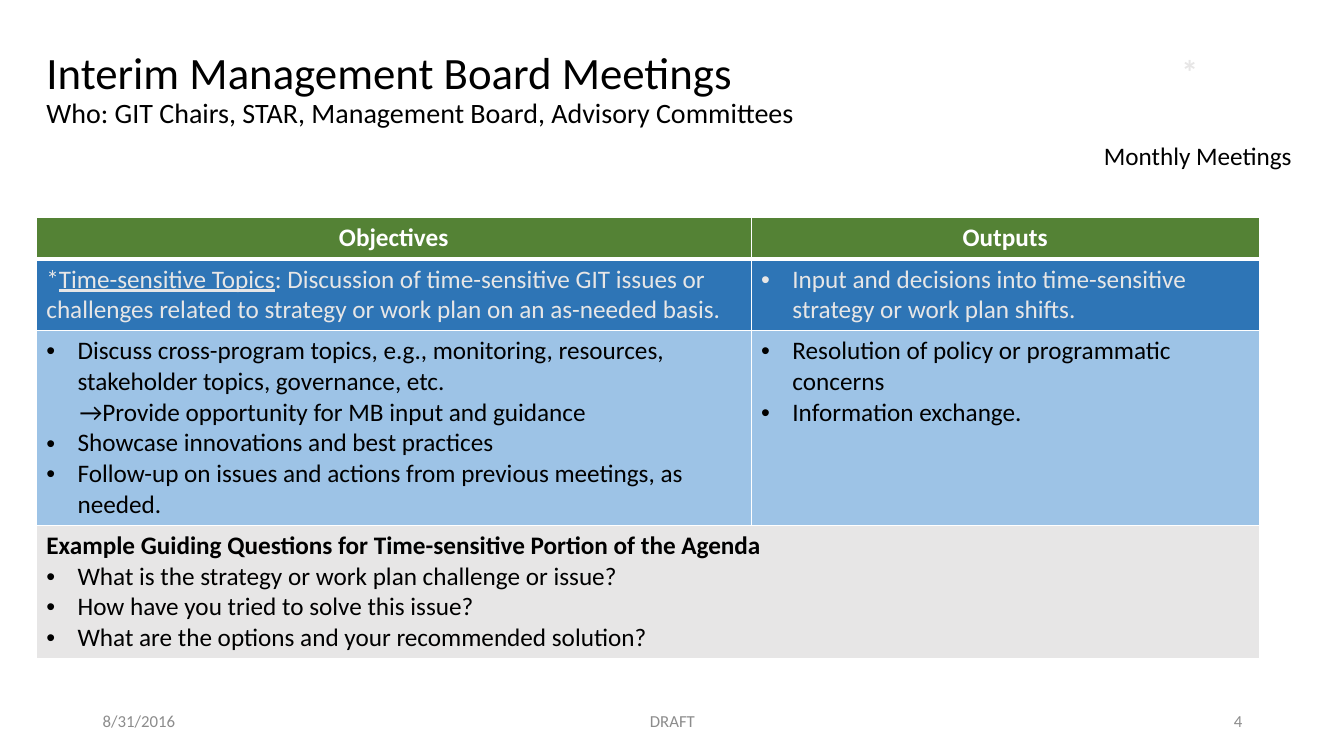
from lxml import etree
from pptx import Presentation
from pptx import util as u
from pptx.dml.color import RGBColor
from pptx.enum import text
from pptx.oxml.ns import qn

BLACK = RGBColor(0, 0, 0)
WHITE = RGBColor(255, 255, 255)
LIGHT = RGBColor(0xE7, 0xE6, 0xE6)
GREY = RGBColor(0x8C, 0x8C, 0x8C)
GREEN = RGBColor(0x54, 0x82, 0x35)
BLUE = RGBColor(0x2E, 0x75, 0xB6)
PALE_BLUE = RGBColor(0x9D, 0xC3, 0xE6)
FONT = "Calibri"
LEFT, CENTER, RIGHT = text.PP_ALIGN.LEFT, text.PP_ALIGN.CENTER, text.PP_ALIGN.RIGHT
TOP, MIDDLE = text.MSO_ANCHOR.TOP, text.MSO_ANCHOR.MIDDLE

# Content
TITLE = [("Interim Management Board Meetings", 32),
         ("Who: GIT Chairs, STAR, Management Board, Advisory Committees", 20)]

# Each paragraph is (kind, text pieces); the second piece, if any, is underlined
ROWS = [
    # height, fill, text colour, cells
    (0.41, GREEN, WHITE, [[("head", ["Objectives"])], [("head", ["Outputs"])]]),
    (0.7, BLUE, LIGHT, [
        [("plain", ["*", "Time-sensitive Topics",
                    ": Discussion of time-sensitive GIT issues or challenges "
                    "related to strategy or work plan on an as-needed basis."])],
        [("bullet", ["Input and decisions into time-sensitive strategy or work plan shifts."])]]),
    (1.93, PALE_BLUE, BLACK, [
        [("bullet", ["Discuss cross-program topics, e.g., monitoring, resources, "
                     "stakeholder topics, governance, etc."]),
         ("sub", ["→Provide opportunity for MB input and guidance"]),
         ("bullet", ["Showcase innovations and best practices"]),
         ("bullet", ["Follow-up on issues and actions from previous meetings, as needed."])],
        [("bullet", ["Resolution of policy or programmatic concerns"]),
         ("bullet", ["Information exchange."])]]),
    (1.32, LIGHT, BLACK, [
        [("strong", ["Example Guiding Questions for Time-sensitive Portion of the Agenda"]),
         ("bullet", ["What is the strategy or work plan challenge or issue?"]),
         ("bullet", ["How have you tried to solve this issue?"]),
         ("bullet", ["What are the options and your recommended solution?"])]]),
]
COLUMNS = [7.09, 5.04]
TABLE_LEFT, TABLE_TOP = 0.36, 2.16

LABELS = [
    # text, left, top, width, height, size, colour, bold, alignment, anchor
    ("Monthly Meetings", 10.71, 1.34, 2.34, 0.4, 18, BLACK, False, CENTER, TOP),
    ("*", 11.62, 0.46, 0.4, 0.5, 24, LIGHT, True, LEFT, TOP),
    ("8/31/2016", 0.92, 6.95, 3, 0.4, 12, GREY, False, LEFT, MIDDLE),
    ("DRAFT", 4.42, 6.95, 4.5, 0.4, 12, GREY, False, CENTER, MIDDLE),
    ("4", 9.42, 6.95, 3, 0.4, 12, GREY, False, RIGHT, MIDDLE),
]


def style(run, size, color, bold=False):
    run.font.name = FONT
    run.font.size = u.Pt(size)
    run.font.color.rgb = color
    run.font.bold = bold


def indent(paragraph, left, first=0, bullet=None):
    properties = paragraph._p.get_or_add_pPr()
    properties.set("marL", str(u.Inches(left)))
    properties.set("indent", str(u.Inches(first)))
    if bullet:
        etree.SubElement(properties, qn("a:buFont"), typeface="Arial")
        etree.SubElement(properties, qn("a:buChar"), char=bullet)


def add_borders(cell, bottom):
    properties = cell._tc.get_or_add_tcPr()
    for side, points in (("L", 1), ("R", 1), ("T", 1), ("B", bottom)):
        line = etree.SubElement(properties, qn("a:ln" + side), w=str(u.Pt(points)))
        fill = etree.SubElement(line, qn("a:solidFill"))
        etree.SubElement(fill, qn("a:srgbClr"), val=str(WHITE))


def fill_cell(cell, paragraphs, color):
    frame = cell.text_frame
    for index, (kind, pieces) in enumerate(paragraphs):
        paragraph = frame.add_paragraph() if index else frame.paragraphs[0]
        paragraph.alignment = CENTER if kind == "head" else LEFT
        if kind == "bullet":
            indent(paragraph, 0.31, -0.31, "•")
        elif kind == "sub":
            indent(paragraph, 0.33)
        for position, piece in enumerate(pieces):
            run = paragraph.add_run()
            run.text = piece
            style(run, 18, color, kind in ("head", "strong"))
            run.font.underline = position == 1


def main():
    presentation = Presentation()
    presentation.slide_width = u.Inches(13.33)
    presentation.slide_height = u.Inches(7.5)
    slide = presentation.slides.add_slide(presentation.slide_layouts[5])

    # Title with its subtitle line
    title = slide.shapes.title
    title.left, title.top, title.width, title.height = map(u.Inches, (0.36, 0.32, 8.46, 1.45))
    frame = title.text_frame
    frame.text = "\v".join(line for line, size in TITLE)
    frame.auto_size = text.MSO_AUTO_SIZE.NONE
    frame.word_wrap = True
    frame.vertical_anchor = MIDDLE
    frame.margin_bottom = u.Inches(0.36)
    heading = frame.paragraphs[0]
    heading.alignment = LEFT
    heading.line_spacing = 0.9
    for run, (line, size) in zip(heading.runs, TITLE):
        style(run, size, BLACK)

    # Table
    heights = [row[0] for row in ROWS]
    table = slide.shapes.add_table(
        len(ROWS), len(COLUMNS), u.Inches(TABLE_LEFT), u.Inches(TABLE_TOP),
        u.Inches(sum(COLUMNS)), u.Inches(sum(heights))).table
    for column, width in zip(table.columns, COLUMNS):
        column.width = u.Inches(width)
    for index, (height, fill, color, contents) in enumerate(ROWS):
        table.rows[index].height = u.Inches(height)
        cells = list(table.rows[index].cells)
        if len(contents) < len(cells):
            cells[0].merge(cells[-1])
        for cell in cells:
            add_borders(cell, 1 if index else 3)
            cell.fill.solid()
            cell.fill.fore_color.rgb = fill
        for cell, paragraphs in zip(cells, contents):
            fill_cell(cell, paragraphs, color)

    # Labels and footer
    for words, left, top, width, height, size, color, bold, alignment, anchor in LABELS:
        box = slide.shapes.add_textbox(*map(u.Inches, (left, top, width, height)))
        frame = box.text_frame
        frame.text = words
        frame.word_wrap = True
        frame.vertical_anchor = anchor
        paragraph = frame.paragraphs[0]
        paragraph.alignment = alignment
        style(paragraph.runs[0], size, color, bold)

    presentation.save("out.pptx")


if __name__ == "__main__":
    main()
